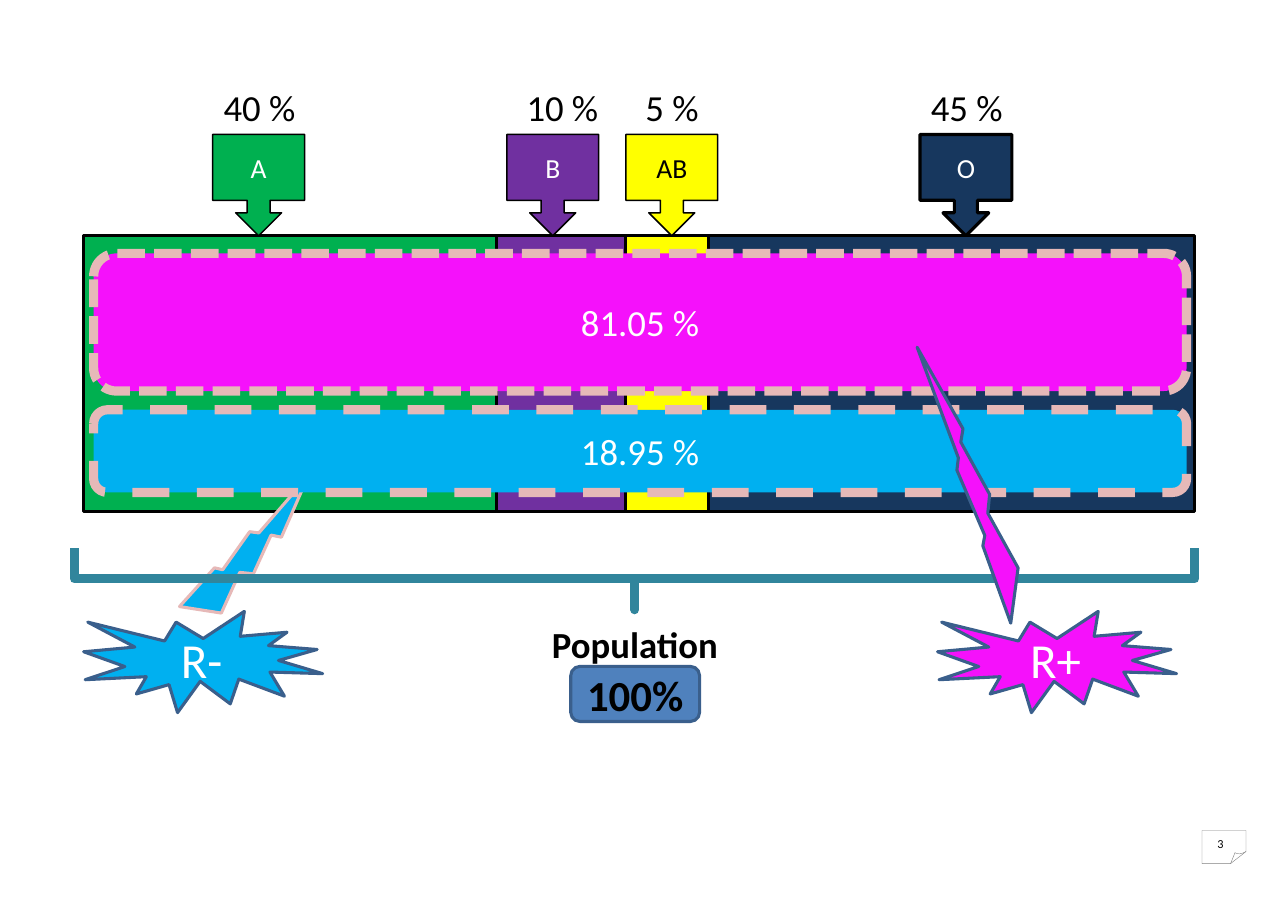
from pptx import Presentation
from pptx.dml.color import RGBColor
from pptx.enum.dml import MSO_LINE
from pptx.enum.shapes import MSO_SHAPE
from pptx.enum.text import MSO_ANCHOR, MSO_AUTO_SIZE, PP_ALIGN
from pptx.util import Pt

RECTANGLE = MSO_SHAPE.RECTANGLE
ROUNDED = MSO_SHAPE.ROUNDED_RECTANGLE
CALLOUT = MSO_SHAPE.DOWN_ARROW_CALLOUT
BOLT = MSO_SHAPE.LIGHTNING_BOLT
SEAL = MSO_SHAPE.EXPLOSION1
BRACE = MSO_SHAPE.LEFT_BRACE
SHORT_DASH, LONG_DASH = MSO_LINE.SQUARE_DOT, MSO_LINE.DASH
LEFT, CENTER = PP_ALIGN.LEFT, PP_ALIGN.CENTER
TOP, MIDDLE = MSO_ANCHOR.TOP, MSO_ANCHOR.MIDDLE
NO_RESIZE = MSO_AUTO_SIZE.NONE

BLACK = RGBColor(0x00, 0x00, 0x00)
WHITE = RGBColor(0xFF, 0xFF, 0xFF)
GREEN = RGBColor(0x00, 0xB0, 0x50)
PURPLE = RGBColor(0x70, 0x30, 0xA0)
YELLOW = RGBColor(0xFF, 0xFF, 0x00)
NAVY = RGBColor(0x17, 0x37, 0x5E)
BLUE = RGBColor(0x4F, 0x81, 0xBD)
STEEL = RGBColor(0x3A, 0x5F, 0x8C)
MAGENTA = RGBColor(0xF5, 0x11, 0xFB)
CYAN = RGBColor(0x00, 0xB0, 0xF0)
ROSE = RGBColor(0xE6, 0xB9, 0xB8)
TEAL = RGBColor(0x31, 0x85, 0x9C)
GREY = RGBColor(0x80, 0x80, 0x80)

BAR_LEFT, BAR_TOP, BAR_HEIGHT = 54.72, 154.1, 180
CALLOUT_WIDTH, CALLOUT_HEIGHT = 60, 66.2
BLOOD_GROUPS = [
    ("A", "40 %", GREEN, WHITE, 270, 139, 139, 1),
    ("B", "10 %", PURPLE, WHITE, 84, 331.2, 337, 1),
    ("AB", "5 %", YELLOW, BLACK, 54, 409, 414.7, 1),
    ("O", "45 %", NAVY, WHITE, 318, 601.2, 601.2, 2),
]
RHESUS_BANDS = [
    ("81.05 %", MAGENTA, 165.6, 90, SHORT_DASH),
    ("18.95 %", CYAN, 267.84, 54, LONG_DASH),
]
SEALS = [("R-", CYAN, 54.72), ("R+", MAGENTA, 612.72)]
NOTE_SHEET = [(785.5, 542.9), (785.5, 564.5), (804.2, 564.5),
              (814.3, 556.6), (814.3, 542.9), (785.5, 542.9)]
NOTE_FOLD = [(804.2, 564.5), (807.1, 557.3), (808, 557.8),
             (810, 558.1), (811.6, 557.8), (814.3, 556.6)]


def apply_format(target, values):
    for name, value in values.items():
        setattr(target, name, value)


def write(shape, text, size, color, align=LEFT, anchor=TOP, bold=False):
    frame = shape.text_frame
    apply_format(frame, {"word_wrap": True, "vertical_anchor": anchor,
                         "auto_size": NO_RESIZE})
    para = frame.paragraphs[0]
    para.alignment = align
    span = para.add_run()
    span.text = text
    apply_format(span.font, {"name": "Calibri", "size": Pt(size), "bold": bold})
    span.font.color.rgb = color
    return para


def clear_margins(shape, left=0):
    apply_format(shape.text_frame, {
        "margin_left": Pt(left), "margin_top": 0,
        "margin_right": 0, "margin_bottom": 0})


def paint(shape, fill, line, width):
    shape.shadow.inherit = False
    if fill is None:
        shape.fill.background()
    else:
        shape.fill.solid()
        shape.fill.fore_color.rgb = fill
    shape.line.color.rgb = line
    shape.line.width = Pt(width)


def add_figure(page, kind, bounds, fill, line, width=2, rotation=0):
    shape = page.shapes.add_shape(kind, *map(Pt, bounds))
    paint(shape, fill, line, width)
    shape.rotation = rotation
    return shape


def add_label(page, text, bounds, size):
    box = page.shapes.add_textbox(*map(Pt, bounds))
    return box, write(box, text, size, BLACK)


def add_outline(page, points, close):
    corners = [(Pt(x), Pt(y)) for x, y in points]
    builder = page.shapes.build_freeform(*corners[0])
    builder.add_line_segments(corners[1:], close=close)
    paint(builder.convert_to_shape(), None, GREY, 0.25)


def add_title(page):
    title = page.shapes.title
    apply_format(title, {"left": Pt(360.7), "top": Pt(406.1),
                         "width": Pt(131.8), "height": Pt(30.2)})
    write(title, "Population", 24, BLACK, bold=True)
    clear_margins(title)


def add_page_number(page):
    add_outline(page, NOTE_SHEET, True)
    add_outline(page, NOTE_FOLD, False)
    box, para = add_label(page, "3", (792.7, 547.2, 14.4, 10.1), 8)
    clear_margins(box, 2.9)
    para.line_spacing = Pt(8.7)


def add_segments(page):
    left = BAR_LEFT
    for _, _, color, _, width, _, _, _ in BLOOD_GROUPS:
        add_figure(page, RECTANGLE, (left, BAR_TOP, width, BAR_HEIGHT), color, BLACK)
        left += width


def add_callouts(page):
    top = BAR_TOP - CALLOUT_HEIGHT
    for name, share, color, ink, _, left, label_left, width in BLOOD_GROUPS:
        bounds = (left, top, CALLOUT_WIDTH, CALLOUT_HEIGHT)
        callout = add_figure(page, CALLOUT, bounds, color, BLACK, width)
        write(callout, name, 18, ink, CENTER, MIDDLE)
        add_label(page, share, (label_left, 51.84, 72, 36), 24)


def add_bands(page):
    for share, color, top, height, dash in RHESUS_BANDS:
        band = add_figure(page, ROUNDED, (61.2, top, 714.2, height), color, ROSE, 6)
        band.line.dash_style = dash
        write(band, share, 24, WHITE, CENTER, MIDDLE)


def add_brace(page):
    brace = add_figure(page, BRACE, (394.6, 12.24, 40.3, 732.2), None, TEAL, 6, 270)
    brace.adjustments[0] = 0
    brace.adjustments[1] = 0.5


def add_seals(page):
    for name, color, left in SEALS:
        seal = add_figure(page, SEAL, (left, 399.6, 156.2, 66.2), color, STEEL)
        write(seal, name, 32, WHITE, CENTER, MIDDLE)


def main():
    deck = Presentation()
    apply_format(deck, {"slide_width": Pt(841.68), "slide_height": Pt(595.44)})
    page = deck.slides.add_slide(deck.slide_layouts[5])
    add_title(page)
    add_page_number(page)
    add_segments(page)
    add_figure(page, BOLT, (141.1, 303.1, 46.1, 116.6), CYAN, ROSE, rotation=238.1)
    add_callouts(page)
    add_bands(page)
    add_brace(page)
    add_seals(page)
    add_figure(page, BOLT, (619.9, 221, 32.4, 189.4), MAGENTA, STEEL, rotation=167.2)
    total = add_figure(page, ROUNDED, (373, 435.6, 84.2, 36), BLUE, STEEL)
    write(total, "100%", 28, BLACK, CENTER, MIDDLE, True)
    deck.save("out.pptx")


if __name__ == "__main__":
    main()
